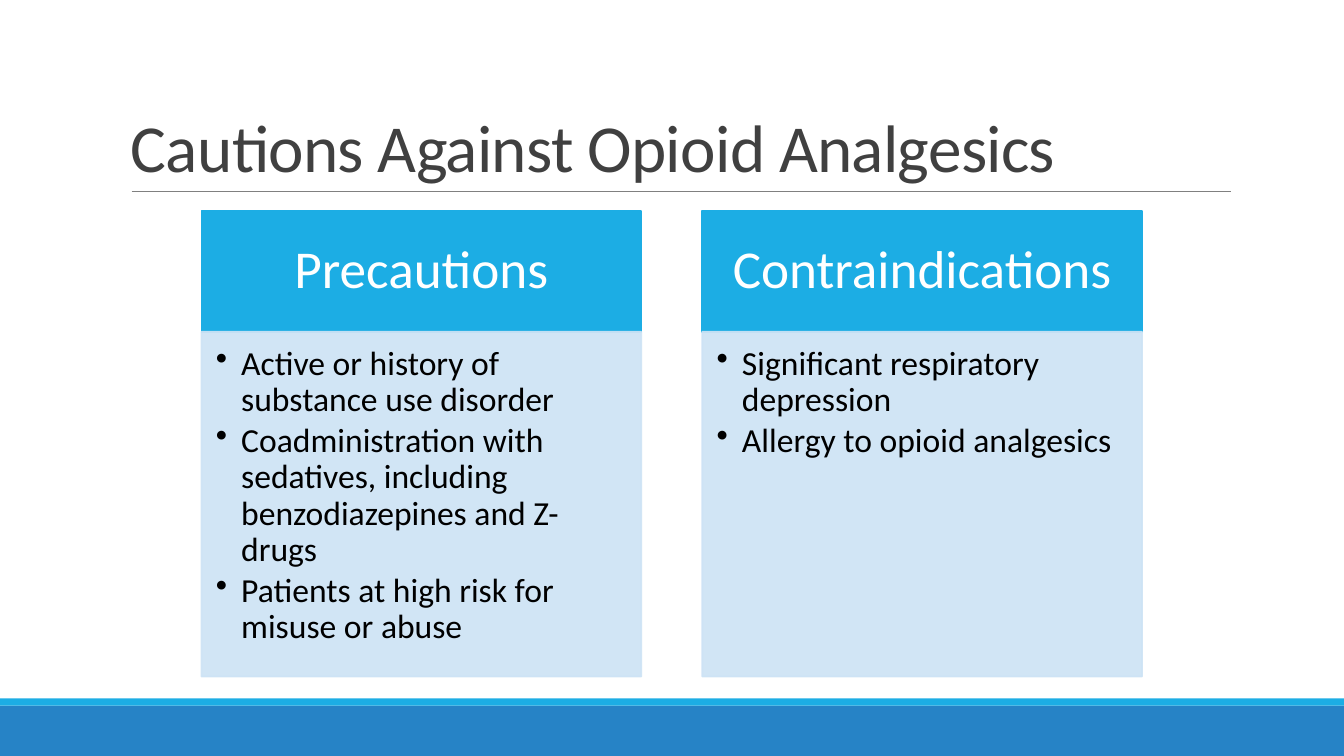
from lxml import etree
from pptx import Presentation
from pptx.dml.color import RGBColor
from pptx.enum.shapes import MSO_CONNECTOR, MSO_SHAPE
from pptx.enum.text import MSO_ANCHOR as Anchor, PP_ALIGN as Align
from pptx.oxml.ns import qn
from pptx.util import Cm, Pt

COLORS = {"blue": "2683C6", "cyan": "1CADE4", "pale": "CDE3F5", "rule": "808080",
          "title": "404040", "white": "FFFFFF", "black": "000000"}
COLUMNS = [
    ("Precautions", ["Active or history of substance use disorder",
                     "Coadministration with sedatives, including benzodiazepines and Z-drugs",
                     "Patients at high risk for misuse or abuse"]),
    ("Contraindications", ["Significant respiratory depression",
                           "Allergy to opioid analgesics"]),
]


def add_block(left, top, width, height, color, outlined=False, alpha=None):
    block = page.shapes.add_shape(MSO_SHAPE.RECTANGLE, Cm(left), Cm(top), Cm(width), Cm(height))
    block.shadow.inherit = False
    block.fill.solid()
    block.fill.fore_color.rgb = RGBColor.from_string(COLORS[color])
    if outlined:
        block.line.width = Pt(1.25)
        block.line.color.rgb = RGBColor.from_string(COLORS[color])
    else:
        block.line.fill.background()
    if alpha:
        for tint in block._element.spPr.iter(qn("a:srgbClr")):
            etree.SubElement(tint, qn("a:alpha"), val=str(alpha * 1000))
    return block


def style_text(para, size, color, spacing, align=Align.LEFT):
    para.font.size = Pt(size)
    para.font.name = "Calibri"
    para.font.color.rgb = RGBColor.from_string(COLORS[color])
    para.line_spacing = spacing
    para.alignment = align


deck = Presentation()
deck.slide_width, deck.slide_height = Cm(33.87), Cm(19.05)
page = deck.slides.add_slide(deck.slide_layouts[6])

# Footer bands
add_block(0, 17.78, 33.87, 1.27, "blue")
add_block(0, 17.6, 33.87, 0.18, "cyan")

# Title and rule
rule = page.shapes.add_connector(MSO_CONNECTOR.STRAIGHT, Cm(3.32), Cm(4.82), Cm(31.01), Cm(4.82))
rule.line.width = Pt(0.5)
rule.line.color.rgb = RGBColor.from_string(COLORS["rule"])
etree.SubElement(rule._element.spPr, qn("a:effectLst"))

title = page.shapes.add_textbox(Cm(3.05), Cm(0.79), Cm(27.94), Cm(4.03)).text_frame
title.word_wrap = True
title.vertical_anchor = Anchor.BOTTOM
para = title.paragraphs[0]
span = para.add_run()
span.text = "Cautions Against Opioid Analgesics"
span._r.get_or_add_rPr().set("spc", "-50")
style_text(para, 48, "title", 0.85)

# Two columns: a heading above a bulleted list
for index, (heading, points) in enumerate(COLUMNS):
    left = 5.08 + index * 12.62

    header = add_block(left, 5.31, 11.08, 3.05, "cyan", outlined=True).text_frame
    header.word_wrap = True
    header.vertical_anchor = Anchor.MIDDLE
    header.margin_left = header.margin_right = Cm(0.76)
    header.margin_top = header.margin_bottom = Cm(0.43)
    header.text = heading
    style_text(header.paragraphs[0], 38, "white", 0.9, Align.CENTER)

    body = add_block(left, 8.36, 11.08, 8.69, "pale", outlined=True, alpha=90).text_frame
    body.word_wrap = True
    body.vertical_anchor = Anchor.TOP
    body.margin_left = body.margin_top = Cm(0.36)
    body.margin_right, body.margin_bottom = Cm(0.48), Cm(0.53)
    body.text = "\n".join(points)
    for para in body.paragraphs:
        style_text(para, 24, "black", 0.9)
        para.space_after = Pt(3.5)
        props = para._p.get_or_add_pPr()
        props.set("marL", str(Cm(0.64)))
        props.set("indent", str(-Cm(0.64)))
        bullet = etree.Element(qn("a:buChar"), char="•")
        props.find(qn("a:defRPr")).addprevious(bullet)

deck.save("out.pptx")
